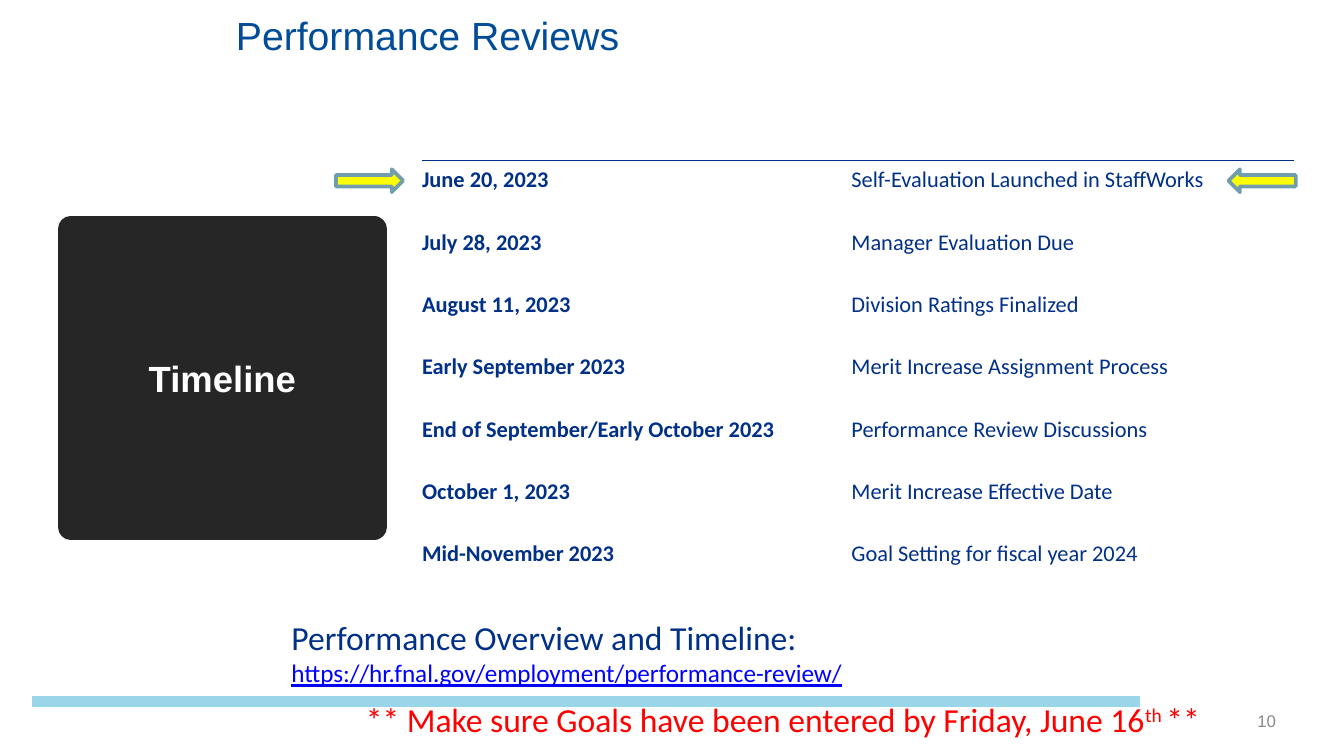
from dataclasses import dataclass
from typing import NamedTuple

from lxml.etree import SubElement
from pptx import Presentation
from pptx.dml.color import RGBColor
from pptx.enum.shapes import MSO_CONNECTOR as Connector, MSO_SHAPE as Preset
from pptx.enum.text import MSO_ANCHOR as Anchor, MSO_AUTO_SIZE as AutoSize, PP_ALIGN as Align
from pptx.oxml.ns import qn
from pptx.util import Emu, Pt

EMU_PER_PX = 4572
PLAIN_TABLE_STYLE = "{2D5ABB26-0587-4C30-8999-92F81FD0307C}"

WHITE = RGBColor(0xFF, 0xFF, 0xFF)
CHARCOAL = RGBColor(0x26, 0x26, 0x26)
NAVY = RGBColor(0x00, 0x30, 0x87)
TITLE_BLUE = RGBColor(0x00, 0x4C, 0x97)
SKY = RGBColor(0x99, 0xD6, 0xEA)
GRAY = RGBColor(0x89, 0x89, 0x89)
YELLOW = RGBColor(0xFF, 0xFF, 0x00)
TEAL = RGBColor(0x71, 0x9E, 0xAD)
RED = RGBColor(0xFF, 0x00, 0x00)
LINK_BLUE = RGBColor(0x00, 0x00, 0xFF)


class Box(NamedTuple):
    left: int
    top: int
    width: int
    height: int


class Margins(NamedTuple):
    left: int
    top: int
    right: int
    bottom: int


class Milestone(NamedTuple):
    date: str
    event: str


@dataclass(frozen=True)
class RunStyle:
    size: float
    color: RGBColor
    font: str = "Calibri"
    bold: bool = False
    underline: bool = False
    raised: bool = False


@dataclass(frozen=True)
class TextBlock:
    box: Box
    paragraphs: list
    margins: Margins = Margins(20, 10, 20, 10)
    anchor: Anchor = Anchor.TOP
    align: Align = Align.LEFT
    line_spacing: float = 1.0
    grows: bool = False


NARROW = Margins(15, 8, 15, 8)
CELL_MARGINS = Margins(0, 4, 12, 36)
TABLE_BOX = Box(628, 238, 1298, 649)
COLUMN_WIDTHS = (639, 659)
DATE_STYLE = RunStyle(12, NAVY, bold=True)
EVENT_STYLE = RunStyle(12, NAVY)
NOTICE = RunStyle(18, RED)

MILESTONES = [
    Milestone("June 20, 2023", "Self-Evaluation Launched in StaffWorks"),
    Milestone("July 28, 2023", "Manager Evaluation Due"),
    Milestone("August 11, 2023", "Division Ratings Finalized"),
    Milestone("Early September 2023", "Merit Increase Assignment Process"),
    Milestone("End of September/Early October 2023", "Performance Review Discussions"),
    Milestone("October 1, 2023", "Merit Increase Effective Date"),
    Milestone("Mid-November 2023", "Goal Setting for fiscal year 2024"),
]

TEXT_BLOCKS = [
    TextBlock(Box(1856, 1043, 92, 60), [[("10", RunStyle(9, GRAY, "Arial"))]],
              NARROW, Anchor.MIDDLE),
    TextBlock(Box(351, 18, 1424, 70),
              [[("Performance Reviews", RunStyle(21, TITLE_BLUE, "Arial"))]],
              Margins(0, 0, 0, 0), Anchor.BOTTOM, line_spacing=0.9),
    TextBlock(Box(350, 1031, 1630, 80),
              [[("** Make sure Goals have been entered by Friday, June 16", NOTICE),
                ("th ", RunStyle(18, RED, raised=True)),
                ("**", NOTICE)]],
              align=Align.CENTER, grows=True),
    TextBlock(Box(414, 909, 1510, 126),
              [[("Performance Overview and Timeline:", RunStyle(18, NAVY))],
               [("https://hr.fnal.gov/employment/performance-review/",
                 RunStyle(13.5, LINK_BLUE, underline=True))]],
              grows=True),
]


def px(length: int) -> Emu:
    return Emu(length * EMU_PER_PX)


def scaled(lengths: tuple) -> list:
    return [px(length) for length in lengths]


def add_run(paragraph, text: str, style: RunStyle) -> None:
    run = paragraph.add_run()
    run.text = text
    run.font.size = Pt(style.size)
    run.font.name = style.font
    run.font.bold = style.bold
    run.font.color.rgb = style.color
    if style.underline:
        run.font.underline = True
    if style.raised:
        run._r.get_or_add_rPr().set("baseline", "30000")


def set_margins(target, margins: Margins) -> None:
    (target.margin_left, target.margin_top,
     target.margin_right, target.margin_bottom) = scaled(margins)


def add_text(slide, block: TextBlock) -> None:
    frame = slide.shapes.add_textbox(*scaled(block.box)).text_frame
    frame.word_wrap = True
    frame.vertical_anchor = block.anchor
    frame.auto_size = AutoSize.SHAPE_TO_FIT_TEXT if block.grows else AutoSize.NONE
    set_margins(frame, block.margins)
    for index, runs in enumerate(block.paragraphs):
        paragraph = frame.add_paragraph() if index else frame.paragraphs[0]
        paragraph.alignment = block.align
        paragraph.line_spacing = block.line_spacing
        for text, style in runs:
            add_run(paragraph, text, style)


def add_preset(slide, preset: Preset, box: Box, fill: RGBColor, line: RGBColor,
               line_width: float):
    shape = slide.shapes.add_shape(preset, *scaled(box))
    shape.shadow.inherit = False
    shape.fill.solid()
    shape.fill.fore_color.rgb = fill
    shape.line.color.rgb = line
    shape.line.width = Pt(line_width)
    return shape


def add_footer_bar(slide) -> None:
    bar = slide.shapes.add_connector(Connector.STRAIGHT, *scaled((48, 1044, 1696, 1044)))
    bar.line.color.rgb = SKY
    bar.line.width = Pt(6)
    SubElement(bar._element.spPr, qn("a:effectLst"))


def add_timeline_panel(slide) -> None:
    panel = add_preset(slide, Preset.RECTANGLE, Box(105, 341, 452, 443),
                       CHARCOAL, CHARCOAL, 13.75)
    SubElement(panel.line._get_or_add_ln(), qn("a:round"))
    frame = panel.text_frame
    frame.word_wrap = True
    frame.vertical_anchor = Anchor.MIDDLE
    set_margins(frame, NARROW)
    frame.paragraphs[0].alignment = Align.CENTER
    add_run(frame.paragraphs[0], "Timeline", RunStyle(19.5, WHITE, "Arial", bold=True))


def add_top_border(cell) -> None:
    properties = cell._tc.get_or_add_tcPr()
    border = properties.makeelement(qn("a:lnT"), {"w": str(Pt(0.5))})
    fill = SubElement(border, qn("a:solidFill"))
    SubElement(fill, qn("a:srgbClr"), val=str(NAVY))
    properties.insert(0, border)


def add_schedule(slide) -> None:
    table = slide.shapes.add_table(len(MILESTONES), len(COLUMN_WIDTHS),
                                   *scaled(TABLE_BOX)).table
    table.first_row = False
    table.horz_banding = False
    table._tbl.tblPr.find(qn("a:tableStyleId")).text = PLAIN_TABLE_STYLE
    for column, width in zip(table.columns, COLUMN_WIDTHS):
        column.width = px(width)
    for row, milestone in zip(table.rows, MILESTONES):
        row.height = Emu(px(TABLE_BOX.height) // len(MILESTONES))
        for cell, text, style in zip(row.cells, milestone, (DATE_STYLE, EVENT_STYLE)):
            cell.fill.background()
            cell.vertical_anchor = Anchor.MIDDLE
            set_margins(cell, CELL_MARGINS)
            paragraph = cell.text_frame.paragraphs[0]
            paragraph.alignment = Align.JUSTIFY
            add_run(paragraph, text, style)
    for cell in table.rows[0].cells:
        add_top_border(cell)


def main() -> None:
    presentation = Presentation()
    presentation.slide_width, presentation.slide_height = scaled((2000, 1125))
    slide = presentation.slides.add_slide(presentation.slide_layouts[6])
    add_footer_bar(slide)
    add_timeline_panel(slide)
    add_schedule(slide)
    for left, rotation in ((500, 0), (1828, 180)):
        arrow = add_preset(slide, Preset.RIGHT_ARROW, Box(left, 252, 100, 34),
                           YELLOW, TEAL, 2)
        arrow.rotation = rotation
    for block in TEXT_BLOCKS:
        add_text(slide, block)
    presentation.save("out.pptx")


if __name__ == "__main__":
    main()
